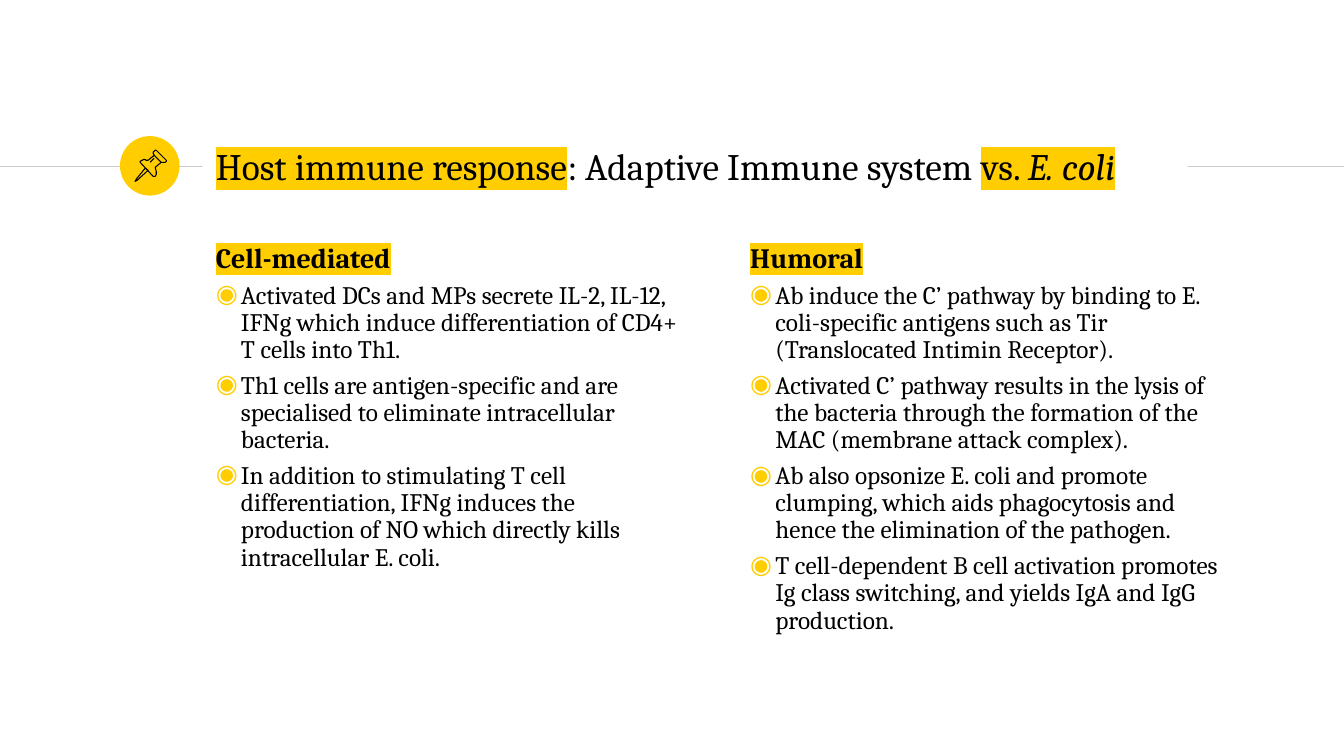
from pptx import Presentation
from pptx.dml.color import RGBColor
from pptx.enum.shapes import MSO_CONNECTOR as CONN, MSO_SHAPE as SHAPE
from pptx.enum.text import MSO_ANCHOR as ANCHOR, MSO_AUTO_SIZE as FIT, PP_ALIGN as ALIGN
from pptx.oxml.ns import qn
from pptx.util import Inches, Pt
from lxml.etree import SubElement

COLORS = {"yellow": "FFCD00", "black": "000000", "white": "FFFFFF", "rule": "CCCCCC"}
FONT = "Cambria"

# Pushpin outlines in hundredths of an inch: points, closed
PIN = [
    ([(10, 18), (1, 29), (0, 31), (2, 30), (13, 20)], True),
    ([(19, 5), (26, 12), (28, 12), (30, 12), (31, 11), (31, 10), (21, 0),
      (20, 0), (19, 1), (18, 2), (18, 3)], True),
    ([(19, 5), (13, 10), (11, 10), (9, 9), (7, 10), (5, 11), (5, 12), (18, 26),
      (20, 26), (21, 24), (21, 21), (20, 17), (26, 12)], False),
    ([(15, 12), (19, 8)], False),
]

# Column heading, height in rows, bullets
COLUMNS = [
    ("Cell-mediated", 47.2, [
        "Activated DCs and MPs secrete IL-2, IL-12, IFNg which induce differentiation "
        "of CD4+ T cells into Th1.",
        "Th1 cells are antigen-specific and are specialised to eliminate intracellular "
        "bacteria.",
        "In addition to stimulating T cell differentiation, IFNg induces the production "
        "of NO which directly kills intracellular E. coli.",
    ]),
    ("Humoral", 57.2, [
        "Ab induce the C’ pathway by binding to E. coli-specific antigens such as Tir "
        "(Translocated Intimin Receptor).",
        "Activated C’ pathway results in the lysis of the bacteria through the formation "
        "of the MAC (membrane attack complex).",
        "Ab also opsonize E. coli and promote clumping, which aids phagocytosis and "
        "hence the elimination of the pathogen.",
        "T cell-dependent B cell activation promotes Ig class switching, and yields IgA "
        "and IgG production.",
    ]),
]


def rgb(name):
    return RGBColor.from_string(COLORS[name])


def add_text(p, text, size=18, bold=False, italic=False, highlight=None):
    r = p.add_run()
    r.text = text
    font = r.font
    font.size, font.bold, font.italic = Pt(size), bold, italic
    font.color.rgb = rgb("black")
    if highlight:
        mark = SubElement(r._r.get_or_add_rPr(), qn("a:highlight"))
        SubElement(mark, qn("a:srgbClr"), val=COLORS[highlight])
    font.name = FONT


class Deck:
    """Places elements on a grid of 100 columns by 100 rows."""

    def __init__(self, prs):
        self.col, self.row = prs.slide_width / 100, prs.slide_height / 100
        self.slide = prs.slides.add_slide(prs.slide_layouts[5])
        self.shapes = self.slide.shapes

    def box(self, x, y, w, h):
        return [round(n) for n in (x * self.col, y * self.row, w * self.col, h * self.row)]

    def frame(self, sp, anchor):
        tf = sp.text_frame
        tf.word_wrap, tf.auto_size, tf.vertical_anchor = True, FIT.NONE, anchor
        tf.margin_left = tf.margin_right = tf.margin_top = tf.margin_bottom = Inches(0.13)
        return tf

    def rule(self, x1, x2, y):
        left, top, width, _ = self.box(x1, y, x2 - x1, 0)
        line = self.shapes.add_connector(CONN.STRAIGHT, left, top, left + width, top)
        line.line.color.rgb, line.line.width = rgb("rule"), Pt(0.75)
        SubElement(line._element.spPr, qn("a:effectLst"))

    def disc(self, *box):
        sp = self.shapes.add_shape(SHAPE.OVAL, *self.box(*box))
        sp.shadow.inherit = False
        sp.fill.solid()
        sp.fill.fore_color.rgb = rgb("yellow")
        sp.line.fill.background()

    def pin(self, x, y):
        left, top, _, _ = self.box(x, y, 0, 0)
        group = self.shapes.add_group_shape()
        for points, closed in PIN:
            outline = group.shapes.build_freeform(*points[0], scale=Inches(0.01))
            outline.add_line_segments(points[1:], close=closed)
            sp = outline.convert_to_shape(left, top)
            sp.shadow.inherit = False
            sp.fill.background()
            sp.line.color.rgb, sp.line.width = rgb("black"), Pt(0.75)

    def title(self, box, runs):
        sp = self.shapes.title
        sp.left, sp.top, sp.width, sp.height = self.box(*box)
        sp.fill.solid()
        sp.fill.fore_color.rgb = rgb("white")
        p = self.frame(sp, ANCHOR.MIDDLE).paragraphs[0]
        p.alignment, p.line_spacing = ALIGN.LEFT, 0.9
        for text, style in runs:
            add_text(p, text, size=26.7, **style)
        # Bring the title in front of the rules
        self.shapes._spTree.append(sp._element)

    def paragraph(self, p, before, bullet=None):
        p.line_spacing, p.space_before = 0.9, Pt(before)
        pPr = p._p.get_or_add_pPr()
        pPr.set("marL", str(Inches(0.25)))
        pPr.set("indent", str(-Inches(0.25)))
        if bullet:
            color = SubElement(pPr, qn("a:buClr"))
            SubElement(color, qn("a:srgbClr"), val=COLORS["yellow"])
            SubElement(pPr, qn("a:buFont"), typeface=FONT)
            SubElement(pPr, qn("a:buChar"), char=bullet)

    def column(self, box, heading, bullets):
        tf = self.frame(self.shapes.add_textbox(*self.box(*box)), ANCHOR.TOP)
        p = tf.paragraphs[0]
        self.paragraph(p, before=8)
        add_text(p, heading, size=20, bold=True, highlight="yellow")
        for text in bullets:
            p = tf.add_paragraph()
            self.paragraph(p, before=6, bullet="◉")
            add_text(p, text)


def main():
    prs = Presentation()
    prs.slide_width, prs.slide_height = Inches(13.33), Inches(7.5)
    deck = Deck(prs)

    # Rules and badge beside the title
    deck.rule(0, 15.08, 22)
    deck.disc(8.93, 18, 4.43, 7.87)
    deck.rule(57.6, 100, 22)

    # Title
    deck.title((15.08, 18, 73.28, 8.53), [
        ("Host immune response", {"highlight": "yellow"}),
        (": Adaptive Immune system ", {}),
        ("vs. ", {"highlight": "yellow"}),
        ("E. coli", {"highlight": "yellow", "italic": True}),
    ])
    deck.pin(10.05, 19.87)

    # Two text columns
    for i, (heading, height, bullets) in enumerate(COLUMNS):
        deck.column((15.08 + 39.76 * i, 30.53, 37.43, height), heading, bullets)

    prs.save("out.pptx")


if __name__ == "__main__":
    main()
